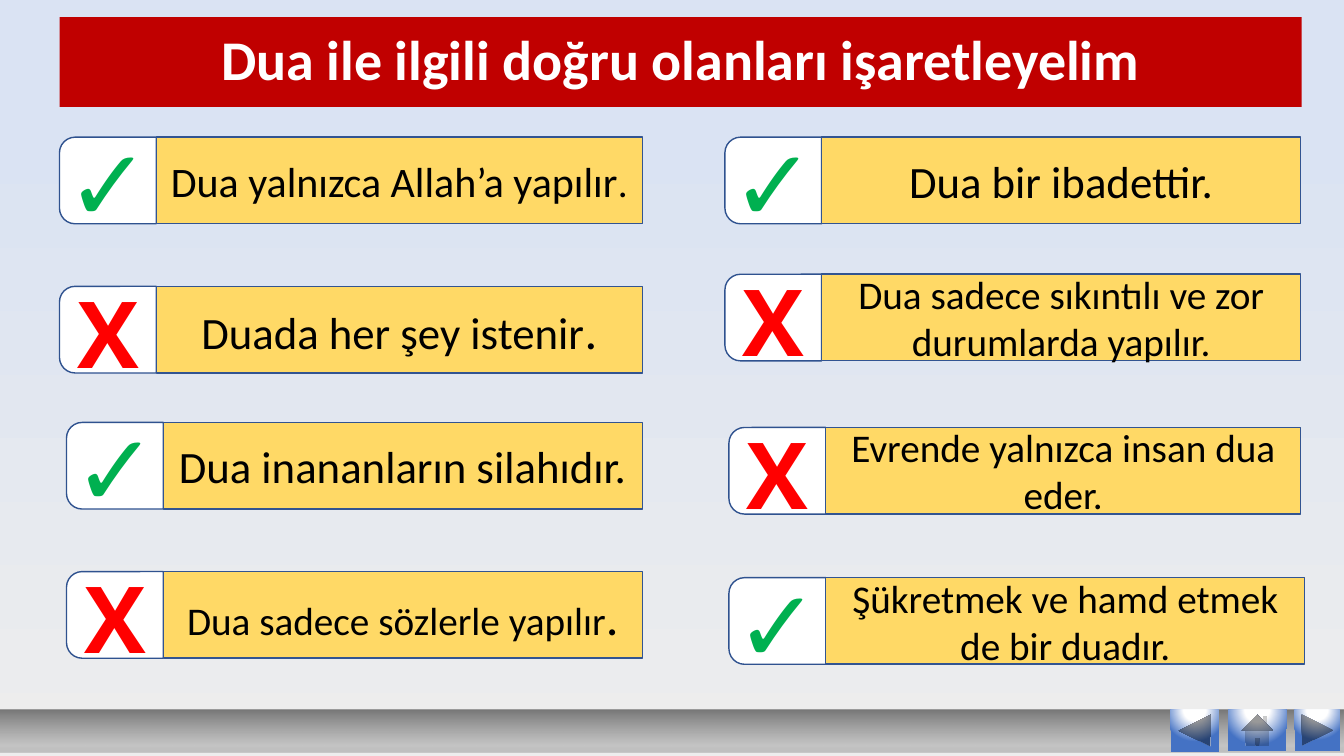
from lxml import etree
from pptx import Presentation, util as u
from pptx.dml.color import RGBColor
from pptx.enum import shapes, text
from pptx.oxml import ns

PX = 9144
WHITE = RGBColor(0xFF, 0xFF, 0xFF)
BLACK = RGBColor(0, 0, 0)
CRIMSON = RGBColor(0xC0, 0, 0)
RED = RGBColor(0xFF, 0, 0)
GREEN = RGBColor(0, 0xB0, 0x50)
YELLOW = RGBColor(0xFF, 0xD9, 0x66)
SILVER = RGBColor(0xC0, 0xC0, 0xC0)
GREY = RGBColor(0xB3, 0xB3, 0xB3)
DARK_GREY = RGBColor(0x77, 0x77, 0x77)
BLUE = RGBColor(0x44, 0x72, 0xC4)
BOX_LINE = RGBColor(0x2F, 0x52, 0x8F)
CARD_LINE = RGBColor(0x32, 0x54, 0x91)
PAPER = RGBColor(0xED, 0xED, 0xED)
SKY = RGBColor(0xDA, 0xE3, 0xF3)

UPWARD = '<a:lin ang="16200000" scaled="0"/>'
GLOW = ('<a:path path="circle"><a:fillToRect l="50000" t="-80000" '
        'r="50000" b="180000"/></a:path>')
BOX_W, CARD_H = 96, 86

CARDS = [
    (59, 136, 637, True, [("Dua yalnızca Allah’a yapılır", 30), (".", 28)]),
    (59, 284, 637, False, [("Duada her şey istenir", 32), (".", 36)]),
    (66, 419, 637, True, [("Dua inananların silahıdır.", 32)]),
    (66, 567, 637, False, [("Dua sadece sözlerle yapılır", 28), (".", 36)]),
    (719, 136, 1290, True, [("Dua bir ibadettir.", 32)]),
    (719, 272, 1290, False,
     [("Dua sadece sıkıntılı ve zor durumlarda yapılır.", 28)]),
    (723, 424, 1290, False, [("Evrende yalnızca insan dua eder.", 28)]),
    (723, 573, 1294, True, [("Şükretmek ve hamd etmek de bir duadır.", 28)]),
]


def px(*values):
    return [u.Emu(int(v * PX)) for v in values]


def add_run(p, words, size, color, font="Calibri", bold=False):
    r = p.add_run()
    r.text = words
    r.font.size = u.Pt(size)
    r.font.name = font
    r.font.bold = bold
    r.font.color.rgb = color


def set_gradient(fill, parent, stops, direction):
    fill.solid()
    marks = ""
    for pos, color, alpha in stops:
        marks += (f'<a:gs pos="{pos * 1000}"><a:srgbClr val="{color}">'
                  f'<a:alpha val="{alpha * 1000}"/></a:srgbClr></a:gs>')
    grad = etree.fromstring(
        f'<a:gradFill {ns.nsdecls("a")} rotWithShape="1">'
        f'<a:gsLst>{marks}</a:gsLst>{direction}</a:gradFill>')
    parent.replace(parent.find(ns.qn("a:solidFill")), grad)


def add_box(s, kind, x, y, w, h, fill=None, line=None):
    sp = s.shapes.add_shape(kind, *px(x, y, w, h))
    sp.shadow.inherit = False
    if fill is not None:
        sp.fill.solid()
        sp.fill.fore_color.rgb = fill
    if line is None:
        sp.line.fill.background()
    else:
        sp.line.color.rgb = line
        sp.line.width = u.Pt(1)
    return sp


def add_gradient_box(s, kind, x, y, w, h, stops, direction):
    sp = add_box(s, kind, x, y, w, h)
    set_gradient(sp.fill, sp._element.spPr, stops, direction)


def add_mark(s, words, x, y, w, h, size, color, font, wrap):
    tf = s.shapes.add_textbox(*px(x, y, w, h)).text_frame
    tf.word_wrap = wrap
    p = tf.paragraphs[0]
    p.alignment = text.PP_ALIGN.CENTER
    add_run(p, words, size, color, font, True)


def add_card(s, x, y, right, correct, runs):
    inset = (BOX_W - CARD_H) / 2
    tab = add_box(s, shapes.MSO_SHAPE.ROUND_2_SAME_RECTANGLE, x + inset,
                  y - inset, CARD_H, BOX_W, WHITE, BOX_LINE)
    tab.rotation = 270
    tab.adjustments[0] = 0.18

    left = x + BOX_W
    sp = add_box(s, shapes.MSO_SHAPE.RECTANGLE, left, y, right - left, CARD_H,
                 YELLOW, CARD_LINE)
    tf = sp.text_frame
    tf.word_wrap = True
    tf.vertical_anchor = text.MSO_ANCHOR.MIDDLE
    p = tf.paragraphs[0]
    p.alignment = text.PP_ALIGN.CENTER
    for words, size in runs:
        add_run(p, words, size, BLACK)

    if correct:
        add_mark(s, "✓", x - 23, y - 21, 143, 131, 72, GREEN, "Roboto Slab", True)
    else:
        add_mark(s, "X", x + 7, y - 15, 82, 121, 66, RED, "Open Sans", False)


def set_title(s, words):
    sp = s.shapes.title
    sp.left, sp.top, sp.width, sp.height = px(59, 17, 1232, 89)
    sp.fill.solid()
    sp.fill.fore_color.rgb = CRIMSON
    tf = sp.text_frame
    tf.word_wrap = True
    tf.auto_size = text.MSO_AUTO_SIZE.NONE
    tf.vertical_anchor = text.MSO_ANCHOR.MIDDLE
    p = tf.paragraphs[0]
    p.alignment = text.PP_ALIGN.CENTER
    p.line_spacing = 0.9
    add_run(p, words, 40, WHITE, bold=True)


def add_navigation(s):
    kinds = shapes.MSO_SHAPE
    add_gradient_box(s, kinds.RECTANGLE, 0, 704, 1333, 42,
                     [(0, SILVER, 100), (17, GREY, 70), (100, DARK_GREY, 100)],
                     UPWARD)
    buttons = [
        (kinds.ACTION_BUTTON_BACK_OR_PREVIOUS, 1161, 48, 42),
        (kinds.ACTION_BUTTON_HOME, 1218, 58, 41),
        (kinds.ACTION_BUTTON_FORWARD_OR_NEXT, 1284, 45, 41),
    ]
    stops = [(0, WHITE, 100), (35, WHITE, 100), (100, BLUE, 100)]
    for kind, x, w, h in buttons:
        add_gradient_box(s, kind, x, 704, w, h, stops, GLOW)


def main():
    prs = Presentation()
    prs.slide_width, prs.slide_height = u.Inches(13.33), u.Inches(7.5)
    s = prs.slides.add_slide(prs.slide_layouts[5])
    fill = s.background.fill
    fill.solid()
    set_gradient(fill, s._element.cSld.bg.bgPr,
                 [(0, PAPER, 100), (84, SKY, 100)], UPWARD)
    set_title(s, "Dua ile ilgili doğru olanları işaretleyelim")
    for card in CARDS:
        add_card(s, *card)
    add_navigation(s)
    prs.save("out.pptx")


if __name__ == "__main__":
    main()
